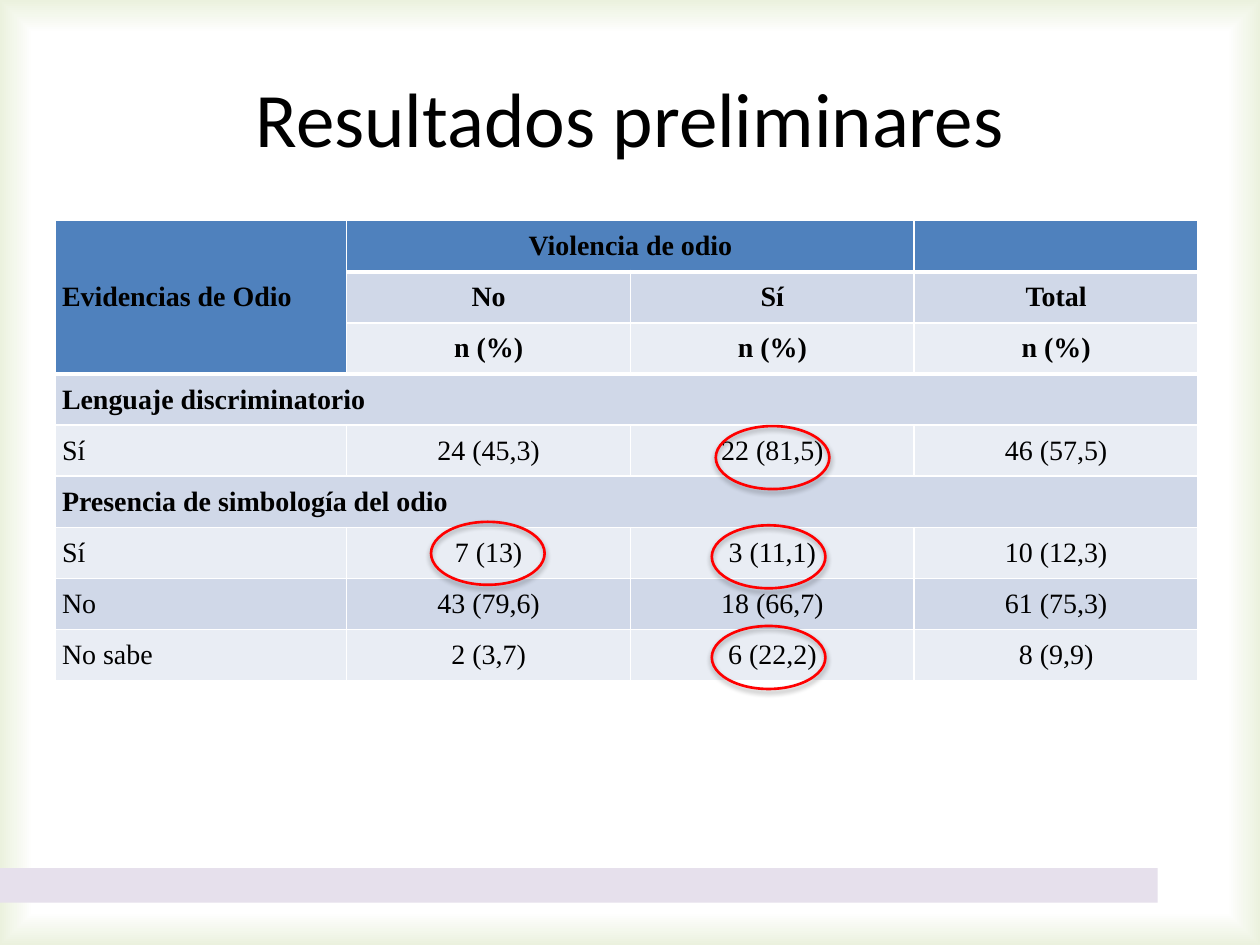
from lxml import etree
from pptx import Presentation
from pptx.dml.color import RGBColor
from pptx.enum import shapes, text
from pptx.oxml import parse_xml
from pptx.oxml.ns import nsdecls, qn
from pptx.util import Cm, Pt

BLACK = RGBColor(0x00, 0x00, 0x00)
RED = RGBColor(0xFF, 0x00, 0x00)
LILAC = RGBColor(0xE6, 0xE0, 0xEC)
HEADER = RGBColor(0x4F, 0x81, 0xBD)
BAND_DARK = RGBColor(0xD0, 0xD8, 0xE8)
BAND_LIGHT = RGBColor(0xE9, 0xED, 0xF4)

TITLE = "Resultados preliminares"
ROWS = [
    ["Evidencias de Odio", "Violencia de odio", "", ""],
    ["", "No", "Sí", "Total"],
    ["", "n (%)", "n (%)", "n (%)"],
    ["Lenguaje discriminatorio", "", "", ""],
    ["Sí", "24 (45,3)", "22 (81,5)", "46 (57,5)"],
    ["Presencia de simbología del odio", "", "", ""],
    ["Sí", "7 (13)", "3 (11,1)", "10 (12,3)"],
    ["No", "43 (79,6)", "18 (66,7)", "61 (75,3)"],
    ["No sabe", "2 (3,7)", "6 (22,2)", "8 (9,9)"],
]
MERGES = [((0, 0), (2, 0)), ((0, 1), (0, 2)), ((3, 0), (3, 3)), ((5, 0), (5, 3))]
BOLD_ROWS = {0, 1, 2, 3, 5}
THICK_BELOW = {0, 2}
COL_WIDTHS = [5.87, 5.72, 5.72, 5.72]
ROW_HEIGHT = 1.03
HIGHLIGHTS = [(14.43, 8.59), (8.69, 10.52), (14.35, 10.59), (14.35, 12.62)]

GRADIENT = f"""<a:gradFill {nsdecls('a')} rotWithShape="1"><a:gsLst>
<a:gs pos="93000"><a:srgbClr val="FFFFFF"><a:alpha val="70000"/></a:srgbClr></a:gs>
<a:gs pos="100000"><a:srgbClr val="EBF1DE"/></a:gs></a:gsLst>
<a:path path="rect"><a:fillToRect l="50000" t="50000" r="50000" b="50000"/></a:path>
</a:gradFill>"""
SHADOW = f"""<a:outerShdw {nsdecls('a')} blurRad="{Pt(3.1)}" dist="{Pt(1.8)}" dir="5400000"
rotWithShape="0"><a:srgbClr val="000000"><a:alpha val="35000"/></a:srgbClr></a:outerShdw>"""


def write(tf, words, size, font, bold=False, align=text.PP_ALIGN.CENTER):
    p = tf.paragraphs[0]
    p.alignment = align
    p.font.size = Pt(size)
    if words:
        r = p.add_run()
        r.text = words
        r.font.size, r.font.name, r.font.bold = Pt(size), font, bold
        r.font.color.rgb = BLACK


def set_borders(cell, top, bottom):
    """Draw white cell borders; top and bottom are widths in points."""
    tc_pr = cell._tc.get_or_add_tcPr()
    for side, width in (("L", 1), ("R", 1), ("T", top), ("B", bottom)):
        ln = etree.SubElement(tc_pr, qn(f"a:ln{side}"), w=str(Pt(width)))
        fill = etree.SubElement(ln, qn("a:solidFill"))
        etree.SubElement(fill, qn("a:srgbClr"), val="FFFFFF")


def add_background(s):
    s.background.fill.solid()
    solid = s.element.find(".//" + qn("p:bgPr")).find(qn("a:solidFill"))
    solid.getparent().replace(solid, parse_xml(GRADIENT))


def add_table(s):
    frame = s.shapes.add_table(len(ROWS), len(COL_WIDTHS), Cm(1.12), Cm(4.45),
                               Cm(sum(COL_WIDTHS)), Cm(ROW_HEIGHT * len(ROWS)))
    table = frame.table
    for column, width in zip(table.columns, COL_WIDTHS):
        column.width = Cm(width)
    for i, row in enumerate(ROWS):
        table.rows[i].height = Cm(ROW_HEIGHT)
        for j, words in enumerate(row):
            cell = table.cell(i, j)
            set_borders(cell, 3 if i - 1 in THICK_BELOW else 1,
                        3 if i in THICK_BELOW else 1)
            cell.fill.solid()
            in_header = i == 0 or (j == 0 and i < 3)
            band = BAND_DARK if i % 2 else BAND_LIGHT
            cell.fill.fore_color.rgb = HEADER if in_header else band
            cell.vertical_anchor = text.MSO_ANCHOR.MIDDLE
            cell.margin_left = cell.margin_right = Cm(0.13)
            cell.margin_top = cell.margin_bottom = 0
            write(cell.text_frame, words, 16, "Times New Roman", bold=i in BOLD_ROWS,
                  align=text.PP_ALIGN.CENTER if j else text.PP_ALIGN.LEFT)
    for first, last in MERGES:
        table.cell(*first).merge(table.cell(*last))


def add_highlight(s, left, top):
    sp = s.shapes.add_shape(shapes.MSO_SHAPE.OVAL, Cm(left), Cm(top), Cm(2.29), Cm(1.27))
    sp.fill.background()
    sp.line.color.rgb = RED
    sp.line.width = Pt(1.5)
    sp.shadow.inherit = False
    sp.element.spPr.find(qn("a:effectLst")).append(parse_xml(SHADOW))


def main():
    prs = Presentation()
    prs.slide_width, prs.slide_height = Cm(25.4), Cm(19.05)
    s = prs.slides.add_slide(prs.slide_layouts[6])
    add_background(s)

    strip = s.shapes.add_shape(shapes.MSO_SHAPE.RECTANGLE, 0, Cm(17.5), Cm(23.34), Cm(0.7))
    strip.fill.solid()
    strip.fill.fore_color.rgb = LILAC
    strip.line.fill.background()
    strip.shadow.inherit = False

    title = s.shapes.add_textbox(Cm(1.27), Cm(0.76), Cm(22.86), Cm(3.18))
    title.text_frame.word_wrap = True
    title.text_frame.vertical_anchor = text.MSO_ANCHOR.MIDDLE
    write(title.text_frame, TITLE, 44, "Calibri")

    add_table(s)
    for left, top in HIGHLIGHTS:
        add_highlight(s, left, top)
    prs.save("out.pptx")


if __name__ == "__main__":
    main()
